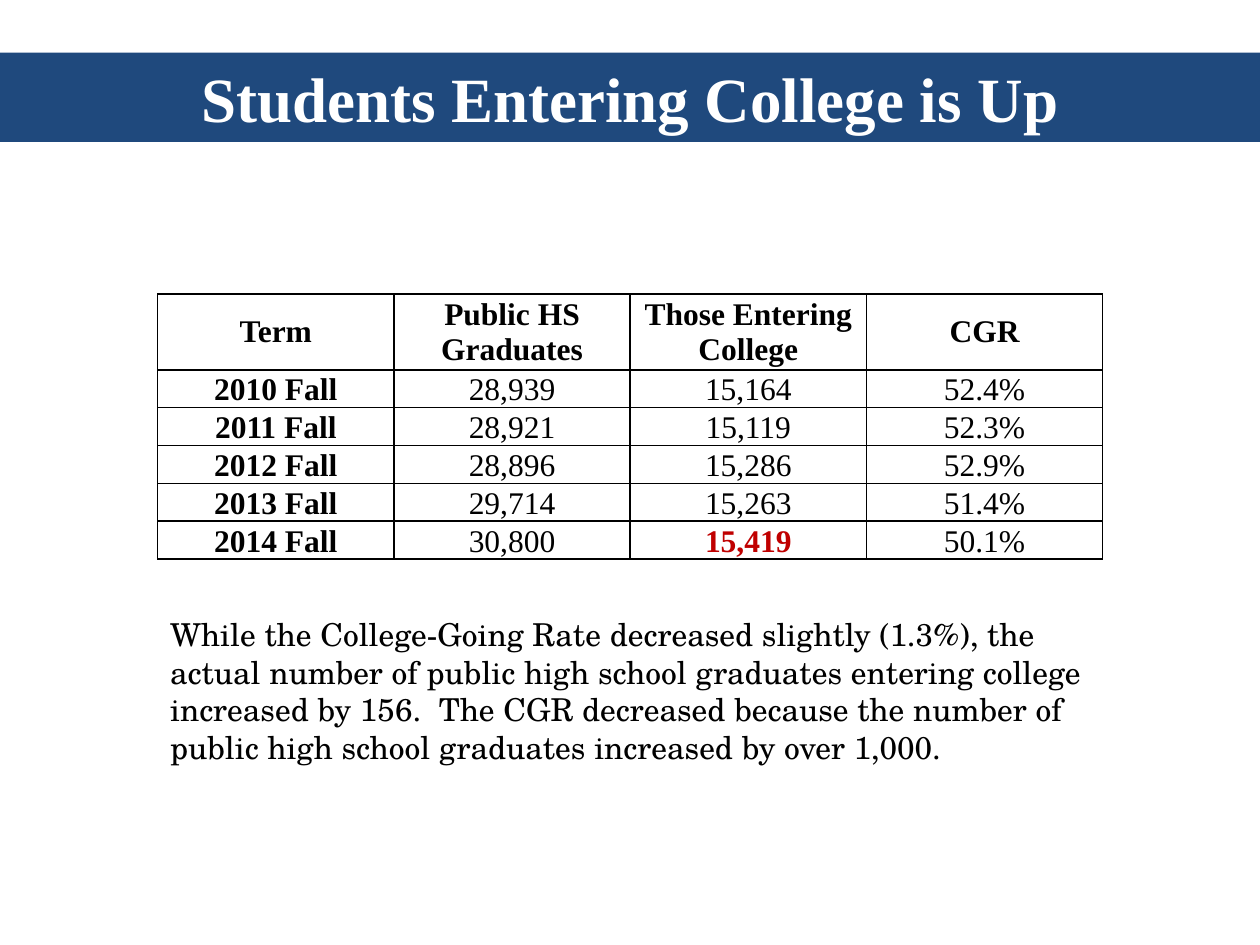
from lxml import etree
from pptx import Presentation
from pptx.dml.color import RGBColor
from pptx.enum.shapes import MSO_SHAPE
from pptx.enum.text import MSO_ANCHOR, MSO_AUTO_SIZE, PP_ALIGN
from pptx.oxml.ns import qn
from pptx.util import Cm, Pt

RECTANGLE = MSO_SHAPE.RECTANGLE
MIDDLE, BOTTOM = MSO_ANCHOR.MIDDLE, MSO_ANCHOR.BOTTOM
FIT_SHAPE = MSO_AUTO_SIZE.SHAPE_TO_FIT_TEXT
LEFT, CENTER = PP_ALIGN.LEFT, PP_ALIGN.CENTER

COLORS = {"banner": "1F497D", "white": "FFFFFF", "black": "000000", "accent": "C00000"}
SERIF, SCHOOLBOOK = "Times New Roman", "TeX Gyre Schola"

HEADINGS = ["Term", "Public HS Graduates", "Those Entering College", "CGR"]
TERMS = [
    ["2010 Fall", "28,939", "15,164", "52.4%"],
    ["2011 Fall", "28,921", "15,119", "52.3%"],
    ["2012 Fall", "28,896", "15,286", "52.9%"],
    ["2013 Fall", "29,714", "15,263", "51.4%"],
    ["2014 Fall", "30,800", "15,419", "50.1%"],
]
HIGHLIGHT = "15,419"
SUMMARY = (
    "While the College-Going Rate decreased slightly (1.3%), the actual number of "
    "public high school graduates entering college increased by 156.  The CGR "
    "decreased because the number of public high school graduates increased by over 1,000."
)


class SlideBuilder:
    """Hold the style and the current slide, and add each kind of element."""

    def __init__(self, slide):
        self.slide = slide

    def color(self, name):
        return RGBColor.from_string(COLORS[name])

    def apply(self, target, values):
        for name, value in values.items():
            setattr(target, name, value)

    def add_text(self, frame, text, align, color="black", **font_values):
        paragraph = frame.paragraphs[0]
        paragraph.alignment = align
        run = paragraph.add_run()
        run.text = text
        self.apply(run.font, {"name": SERIF, "size": Pt(18), "bold": False, **font_values})
        run.font.color.rgb = self.color(color)

    def banner(self, text, left, top, width, height):
        banner = self.slide.shapes.add_shape(RECTANGLE, left, top, width, height)
        banner.shadow.inherit = False
        banner.fill.solid()
        banner.fill.fore_color.rgb = self.color("banner")
        banner.line.fill.background()
        self.apply(banner.text_frame, {"word_wrap": True, "auto_size": FIT_SHAPE})
        self.add_text(banner.text_frame, text, CENTER, "white", size=Pt(36), bold=True)

    def paragraph(self, text, left, top, width, height):
        frame = self.slide.shapes.add_textbox(left, top, width, height).text_frame
        self.apply(frame, {"word_wrap": True, "auto_size": FIT_SHAPE})
        self.add_text(frame, text, LEFT, name=SCHOOLBOOK)

    def border(self, cell):
        properties = cell._tc.get_or_add_tcPr()
        for side in ("lnL", "lnR", "lnT", "lnB"):
            line = etree.SubElement(properties, qn(f"a:{side}"), w=str(Pt(1)))
            fill = etree.SubElement(line, qn("a:solidFill"))
            etree.SubElement(fill, qn("a:srgbClr"), val=COLORS["black"])

    def table(self, headings, records, left, top, width, heading_height, record_height):
        rows = [headings, *records]
        height = heading_height + record_height * len(records)
        table = self.slide.shapes.add_table(
            len(rows), len(headings), left, top, width, height
        ).table
        self.apply(table, {"first_row": False, "horz_banding": False})
        for r, values in enumerate(rows):
            table.rows[r].height = record_height if r else heading_height
            for c, text in enumerate(values):
                cell = table.cell(r, c)
                self.border(cell)
                cell.fill.background()
                self.apply(cell, {
                    "margin_left": Cm(0.18), "margin_right": Cm(0.18),
                    "margin_top": 0, "margin_bottom": 0,
                    "vertical_anchor": BOTTOM if r else MIDDLE,
                })
                marked = text == HIGHLIGHT
                self.add_text(cell.text_frame, text, CENTER, "accent" if marked else "black",
                              bold=r == 0 or c == 0 or marked)


def main():
    presentation = Presentation()
    presentation.slide_width, presentation.slide_height = Cm(25.4), Cm(19.05)
    builder = SlideBuilder(presentation.slides.add_slide(presentation.slide_layouts[6]))
    builder.banner("Students Entering College is Up", 0, Cm(1.06), Cm(25.4), Cm(1.8))
    builder.table(HEADINGS, TERMS, Cm(3.18), Cm(5.93), Cm(19.05), Cm(1.52), Cm(0.76))
    builder.paragraph(SUMMARY, Cm(3.18), Cm(12.27), Cm(19.25), Cm(3.33))
    presentation.save("out.pptx")


if __name__ == "__main__":
    main()
